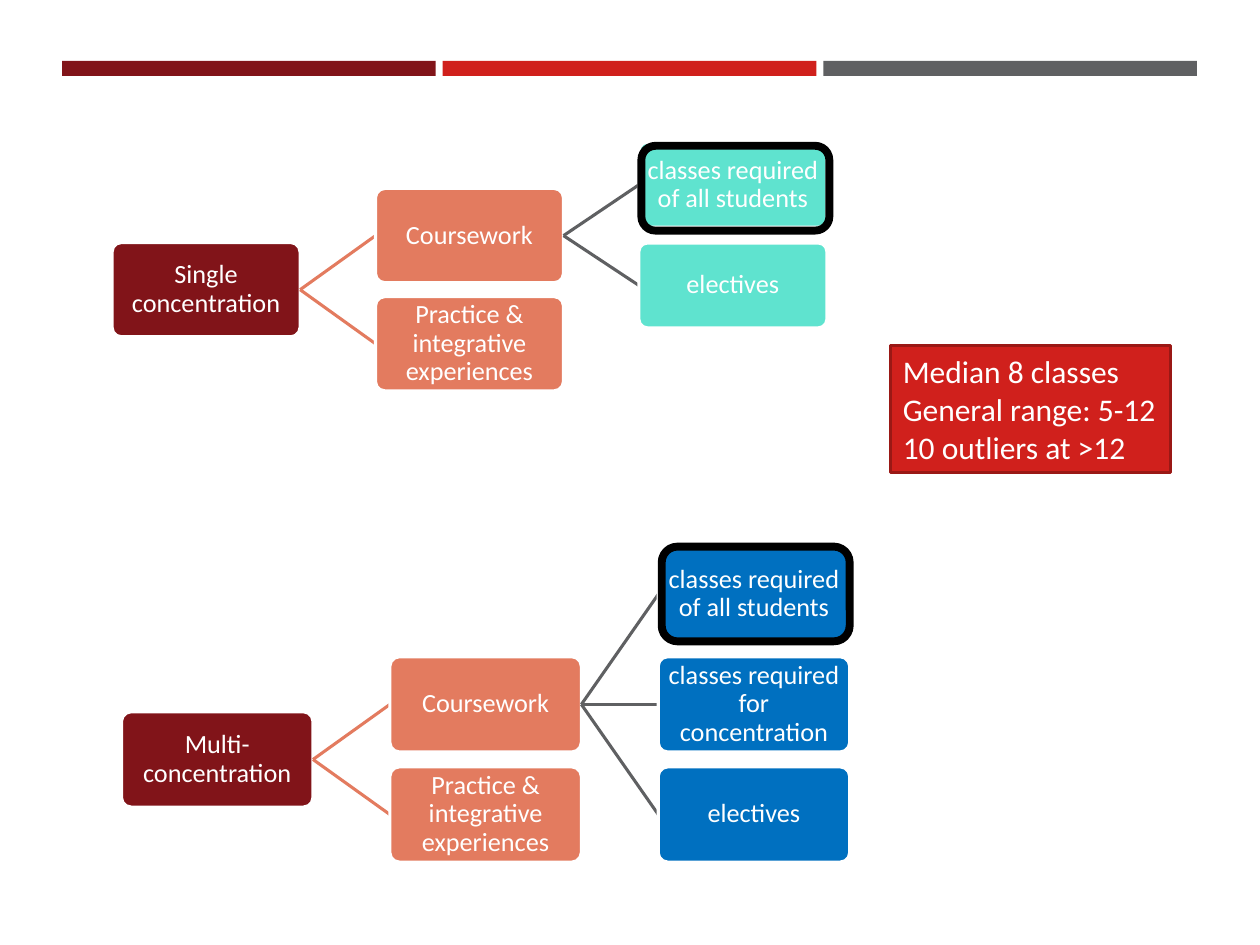
from dataclasses import dataclass

from lxml.etree import SubElement
from pptx import Presentation
from pptx.dml.color import RGBColor as RGB
from pptx.enum.shapes import MSO_CONNECTOR as Line, MSO_SHAPE as Shape
from pptx.enum.text import MSO_ANCHOR as Anchor, PP_ALIGN as Align
from pptx.oxml.ns import qn
from pptx.util import Cm, Pt


@dataclass(frozen=True)
class Theme:
    """Colours, font and sizes of the slide."""
    maroon: str = "811419"
    red: str = "D0201C"
    dark_red: str = "9A1815"
    grey: str = "5F6062"
    coral: str = "E37B5F"
    teal: str = "5FE3CF"
    blue: str = "0070C0"
    white: str = "FFFFFF"
    black: str = "000000"
    font: str = "Calibri"
    node_size: float = 15
    note_size: float = 18
    thin: float = 1.75
    thick: float = 4.5


T = Theme()


def add_block(s, kind, box, fill=None, line=None, width=T.thin):
    """Add a preset shape in a box of centimetres."""
    sp = s.shapes.add_shape(kind, *(Cm(v) for v in box))
    sp.shadow.inherit = False
    if fill:
        sp.fill.solid()
        sp.fill.fore_color.rgb = RGB.from_string(fill)
    else:
        sp.fill.background()
    if line:
        sp.line.color.rgb = RGB.from_string(line)
        sp.line.width = Pt(width)
    else:
        sp.line.fill.background()
    return sp


def write(sp, text, size, align):
    """Fill a shape with white text, one paragraph per line."""
    tf = sp.text_frame
    tf.word_wrap = True
    tf.vertical_anchor = Anchor.MIDDLE
    tf.text = text
    for p in tf.paragraphs:
        p.alignment = align
        for r in p.runs:
            r.font.name = T.font
            r.font.size = Pt(size)
            r.font.color.rgb = RGB.from_string(T.white)
    return tf


def add_node(s, box, text, fill):
    """Add one labelled node of a tree."""
    sp = add_block(s, Shape.ROUNDED_RECTANGLE, box, fill, T.white)
    sp.adjustments[0] = 0.1
    tf = write(sp, text, T.node_size, Align.CENTER)
    tf.margin_left = tf.margin_right = tf.margin_top = tf.margin_bottom = Cm(0.03)
    tf.paragraphs[0].line_spacing = 0.9


def add_link(s, parent, child, color):
    """Join the right side of the parent box to the left side of the child box."""
    x, y, w, h = parent
    cx, cy, _, ch = child
    ends = (x + w, y + h / 2, cx, cy + ch / 2)
    cxn = s.shapes.add_connector(Line.STRAIGHT, *(Cm(v) for v in ends))
    cxn.line.color.rgb = RGB.from_string(color)
    cxn.line.width = Pt(T.thin)
    SubElement(cxn._element.spPr, qn("a:effectLst"))


def add_children(s, parent, first, pitch, labels, fill, link):
    """Stack child nodes below the first box and link each to the parent."""
    x, y, w, h = first
    for i, label in enumerate(labels):
        box = (x, y + i * pitch, w, h)
        add_link(s, parent, box, link)
        add_node(s, box, label, fill)


def add_tree(s, box, name, step, drop, node_h, rows, leaves, leaf_h, leaf_rows, fill, mark):
    """Draw a three-level tree with its first leaf outlined."""
    x, y, w = box
    root = (x, y + drop + rows / 2, w, node_h)
    branch = (x + step, y + drop, w, node_h)
    leaf = (x + 2 * step, y, w, leaf_h)
    add_node(s, root, name, T.maroon)
    add_children(s, root, branch, rows,
                 ["Coursework", "Practice & integrative experiences"], T.coral, T.coral)
    add_children(s, branch, leaf, leaf_rows, leaves, fill, T.grey)
    dx, dy, mark_h = mark
    add_block(s, Shape.ROUNDED_RECTANGLE, (leaf[0] + dx, y + dy, 3.79, mark_h),
              line=T.black, width=T.thick)


def add_bars(s, box):
    """Draw the three bars along the top."""
    x, y, w, h = box
    gap = 0.14
    bar = (w - 2 * gap) / 3
    for i, fill in enumerate((T.maroon, T.red, T.grey)):
        add_block(s, Shape.RECTANGLE, (x + i * (bar + gap), y, bar, h), fill)


def add_note(s, box):
    """Draw the red summary box."""
    sp = add_block(s, Shape.RECTANGLE, box, T.red, T.dark_red)
    write(sp, "Median 8 classes\nGeneral range: 5-12\n10 outliers at >12",
          T.note_size, Align.LEFT)


def main():
    """Build and save the slide."""
    prs = Presentation()
    prs.slide_width, prs.slide_height = Cm(25.4), Cm(19.05)
    s = prs.slides.add_slide(prs.slide_layouts[6])
    add_bars(s, (1.25, 1.23, 22.88, 0.3))
    add_tree(s, (2.45, 11.02, 3.86), "Multi-concentration", step=5.41, drop=2.22,
             node_h=1.92, rows=2.22,
             leaves=["classes required of all students",
                     "classes required for concentration", "electives"],
             leaf_h=1.92, leaf_rows=2.22, fill=T.blue, mark=(0.07, 0, 1.91))
    add_tree(s, (2.26, 2.87, 3.79), "Single concentration", step=5.31, drop=0.93,
             node_h=1.9, rows=2.18,
             leaves=["classes required of all students", "electives"],
             leaf_h=1.71, leaf_rows=2.03, fill=T.teal, mark=(0.05, 0.07, 1.71))
    add_note(s, (17.95, 6.96, 5.65, 2.57))
    prs.save("out.pptx")


if __name__ == "__main__":
    main()
